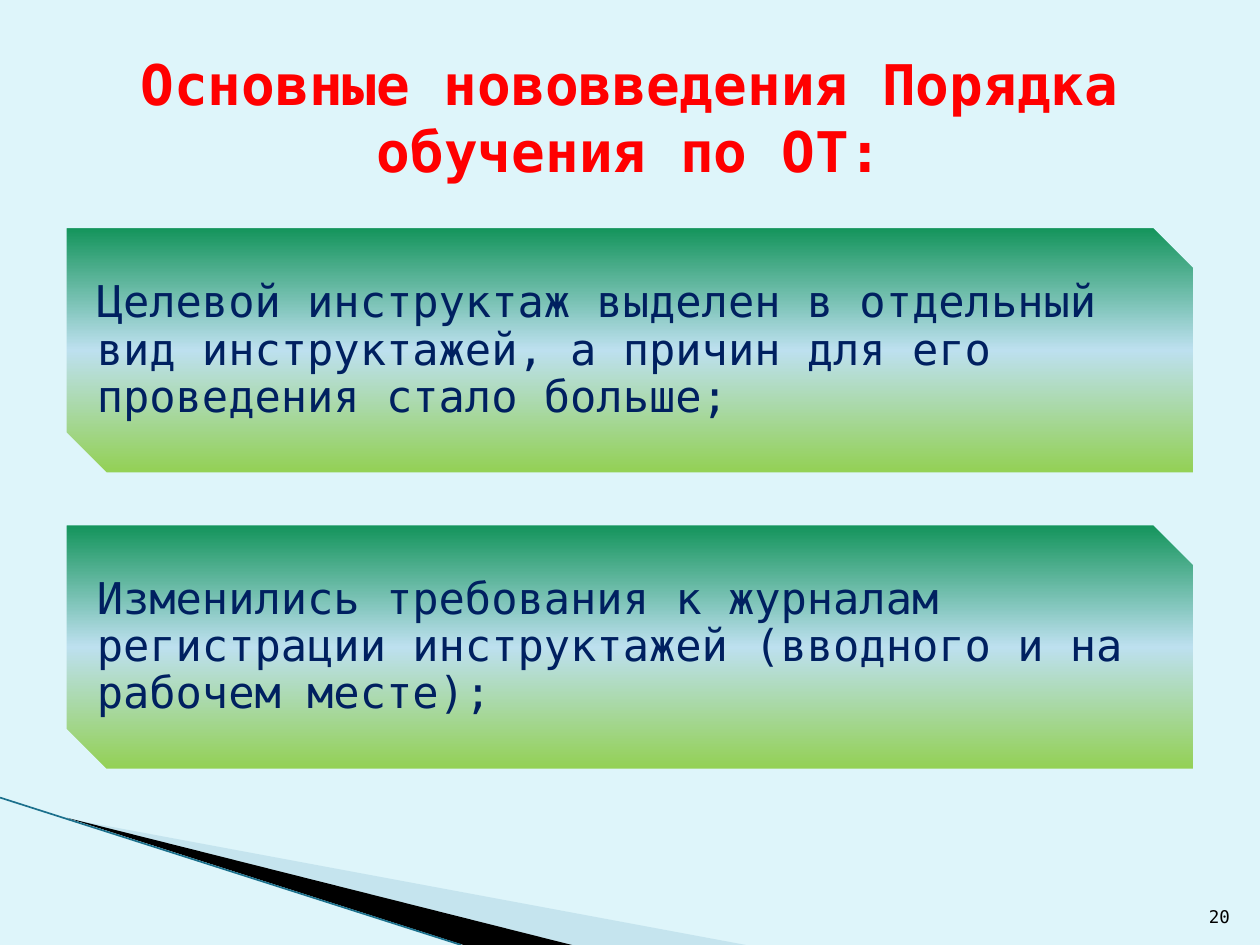
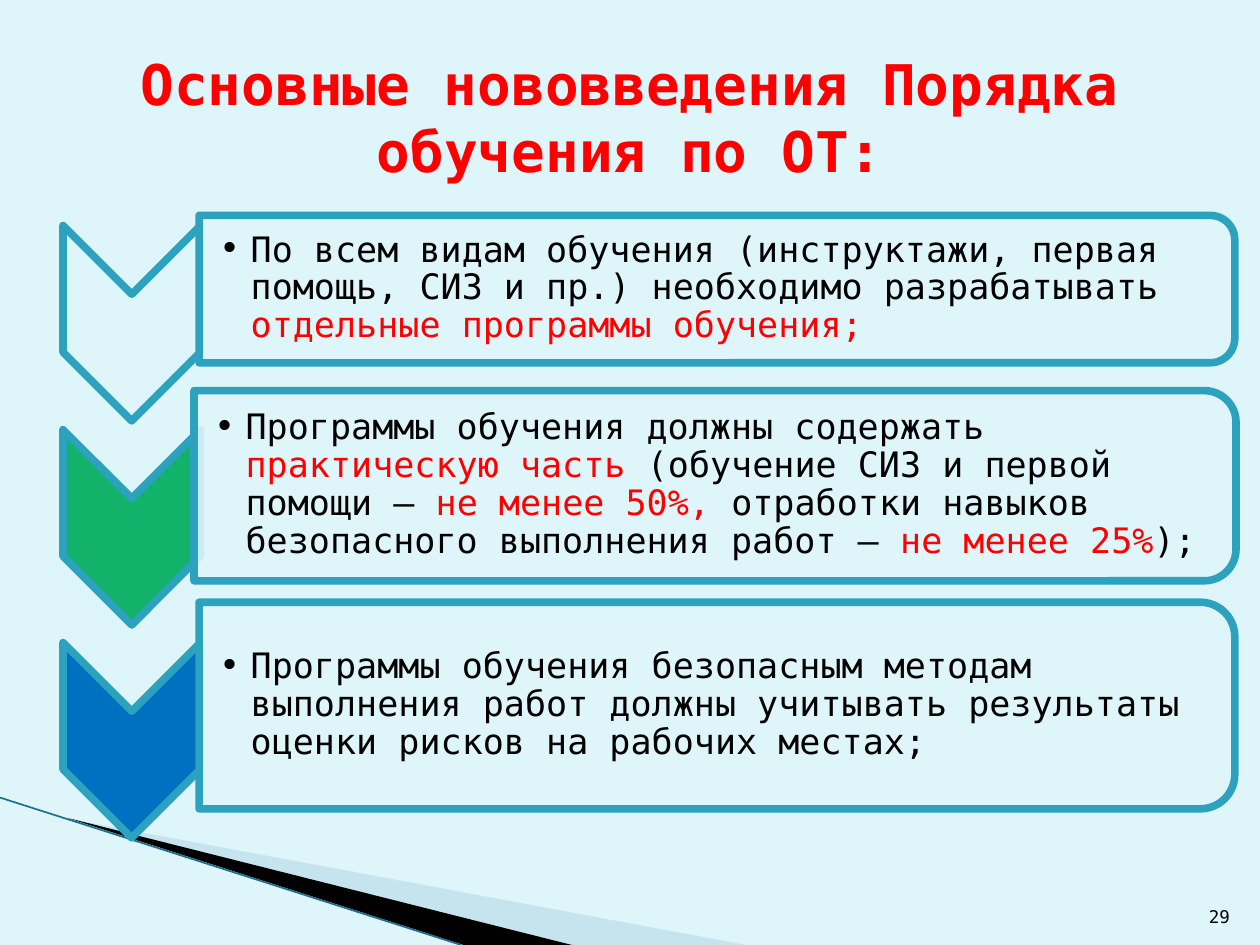
from lxml.etree import SubElement
from pptx import Presentation
from pptx.dml.color import RGBColor
from pptx.enum.shapes import MSO_CONNECTOR, MSO_SHAPE
from pptx.enum.text import MSO_ANCHOR, PP_ALIGN
from pptx.oxml.ns import qn
from pptx.util import Inches, Pt

FONT = "DejaVu Sans Mono"
TITLE = "Основные нововведения Порядка обучения по ОТ:"
BACKGROUND = RGBColor(0xDE, 0xF5, 0xFA)
PALE_BLUE = RGBColor(0xA0, 0xCB, 0xDC)
DARK_TEAL = RGBColor(0x1B, 0x70, 0x8C)
TEAL = RGBColor(0x2D, 0xA2, 0xBF)
GREEN = RGBColor(0x12, 0xB2, 0x6A)
BLUE = RGBColor(0x00, 0x70, 0xC0)
NAVY = RGBColor(0x00, 0x20, 0x60)
BLACK = RGBColor(0, 0, 0)
RED = RGBColor(0xFF, 0, 0)
BAND = [(0, RGBColor(0x0F, 0x92, 0x57)), (50, RGBColor(0xBD, 0xE0, 0xEF)),
        (100, RGBColor(0x92, 0xD0, 0x50))]

CARDS = [
    (1.78, 2, "Целевой инструктаж выделен в отдельный вид инструктажей, "
              "а причин для его проведения стало больше;"),
    (4.14, 1.99, "Изменились требования к журналам регистрации инструктажей "
                 "(вводного и на рабочем месте);"),
]
STEPS = [
    (1.79, BACKGROUND, (1.58, 1.71, 8.22, 1.17), [
        ("По всем видам обучения (инструктажи, первая помощь, СИЗ и пр.) "
         "необходимо разрабатывать ", BLACK),
        ("отдельные программы обучения;", RED)]),
    (3.41, GREEN, (1.54, 3.1, 8.27, 1.51), [
        ("Программы обучения должны содержать ", BLACK),
        ("практическую часть ", RED),
        ("(обучение СИЗ и первой помощи — ", BLACK),
        ("не менее 50%, ", RED),
        ("отработки навыков безопасного выполнения работ — ", BLACK),
        ("не менее 25%", RED),
        (");", BLACK)]),
    (5.1, BLUE, (1.58, 4.78, 8.22, 1.64), [
        ("Программы обучения безопасным методам выполнения работ должны "
         "учитывать результаты оценки рисков на рабочих местах;", BLACK)]),
]


def write(tf, text, size=20, color=BLACK, bold=False, align=PP_ALIGN.LEFT,
          spacing=None, bullet=False):
    """Write a string, or a list of (text, colour) pairs, as one paragraph."""
    p = tf.paragraphs[0]
    p.alignment = align
    if spacing:
        p.line_spacing = spacing
    if bullet:
        pPr = p._p.get_or_add_pPr()
        pPr.set("marL", str(Inches(0.25)))
        pPr.set("indent", str(-Inches(0.25)))
        SubElement(pPr, qn("a:buFont")).set("typeface", FONT)
        SubElement(pPr, qn("a:buChar")).set("char", "•")
    for part, part_color in [(text, color)] if isinstance(text, str) else text:
        r = p.add_run()
        r.text = part
        r.font.name = FONT
        r.font.size = Pt(size)
        r.font.bold = bold
        r.font.color.rgb = part_color


class Deck:
    """Holds the presentation style and the current slide."""

    def __init__(self):
        self.prs = Presentation()
        self.prs.slide_width, self.prs.slide_height = Inches(10), Inches(7.5)

    def slide(self, number):
        """Add a slide with its background, corner ornament, title and number."""
        self.s = self.prs.slides.add_slide(self.prs.slide_layouts[6])
        self.s.background.fill.solid()
        self.s.background.fill.fore_color.rgb = BACKGROUND
        self.wedge([(0.55, 6.5), (5.92, 7.5), (4.54, 7.5)], PALE_BLUE, 40)
        self.wedge([(0.53, 6.49), (4.54, 7.5), (3.68, 7.5)], BLACK)
        self.line((0, 6.33), (3.66, 7.5))
        self.text((0.5, 0.3, 9, 1.25), TITLE, size=32, color=RED, bold=True,
                  align=PP_ALIGN.CENTER)
        self.text((9.46, 7.01, 0.4, 0.4), str(number), size=10,
                  anchor=MSO_ANCHOR.BOTTOM, align=PP_ALIGN.RIGHT)

    def paint(self, sp, color, opacity=100, outline=None):
        """Give a shape its solid fill and outline."""
        sp.shadow.inherit = False
        sp.fill.solid()
        sp.fill.fore_color.rgb = color
        if opacity < 100:
            clr = sp.fill._xPr.find(qn("a:solidFill"))[0]
            SubElement(clr, qn("a:alpha")).set("val", str(opacity * 1000))
        if outline is None:
            sp.line.fill.background()
        else:
            sp.line.color.rgb = outline
            sp.line.width = Pt(4.33)

    def wedge(self, points, color, opacity=100):
        """Draw a filled polygon."""
        corners = [(Inches(x), Inches(y)) for x, y in points]
        builder = self.s.shapes.build_freeform(*corners[0])
        builder.add_line_segments(corners[1:], close=True)
        self.paint(builder.convert_to_shape(), color, opacity)

    def line(self, start, end):
        """Draw a thin straight line."""
        cn = self.s.shapes.add_connector(
            MSO_CONNECTOR.STRAIGHT, *map(Inches, start + end))
        cn.line.color.rgb = DARK_TEAL
        cn.line.width = Pt(0.95)
        SubElement(cn._element.spPr, qn("a:effectLst"))

    def text(self, box, text, anchor=MSO_ANCHOR.MIDDLE,
             insets=(0.1, 0.05, 0.1, 0.05), **style):
        """Add a wrapped text box."""
        tf = self.s.shapes.add_textbox(*map(Inches, box)).text_frame
        tf.word_wrap = True
        tf.vertical_anchor = anchor
        (tf.margin_left, tf.margin_top,
         tf.margin_right, tf.margin_bottom) = map(Inches, insets)
        write(tf, text, **style)

    def card(self, top, height, text):
        """Add a gradient card with two snipped corners."""
        sp = self.s.shapes.add_shape(
            MSO_SHAPE.SNIP_2_DIAG_RECTANGLE,
            Inches(0.5), Inches(top), Inches(9), Inches(height))
        self.paint(sp, BACKGROUND, outline=BACKGROUND)
        sp.fill.gradient()
        grad = sp.fill._xPr.find(qn("a:gradFill"))
        for child in list(grad):
            grad.remove(child)
        stops = SubElement(grad, qn("a:gsLst"))
        for position, color in BAND:
            gs = SubElement(stops, qn("a:gs"), pos=str(position * 1000))
            SubElement(gs, qn("a:srgbClr"), val=str(color))
        SubElement(grad, qn("a:lin"), ang="5400000", scaled="0")
        self.text((0.67, top + 0.17, 8.67, height - 0.33), text, size=25,
                  color=NAVY, insets=(0.1,) * 4, spacing=0.9)

    def turned(self, kind, box, color, opacity=100):
        """Add a shape turned by 90 degrees that covers the given box."""
        left, top, width, height = box
        shift = (width - height) / 2
        sp = self.s.shapes.add_shape(
            kind, Inches(left + shift), Inches(top - shift),
            Inches(height), Inches(width))
        sp.rotation = 90
        self.paint(sp, color, opacity, TEAL)

    def step(self, top, color, box, text):
        """Add a downward chevron with its bulleted panel."""
        self.turned(MSO_SHAPE.CHEVRON, (0.5, top, 1.09, 1.55), color)
        self.turned(MSO_SHAPE.ROUND_2_SAME_RECTANGLE, box, BACKGROUND, 90)
        left, panel_top, width, height = box
        self.text((left, panel_top + 0.06, width - 0.07, height - 0.13), text,
                  insets=(0.16, 0.01, 0.01, 0.01), spacing=0.9, bullet=True)


def main():
    """Build both slides and save the file."""
    deck = Deck()
    deck.slide(20)
    for card in CARDS:
        deck.card(*card)
    deck.slide(29)
    for step in STEPS:
        deck.step(*step)
    deck.prs.save("out.pptx")


if __name__ == "__main__":
    main()
